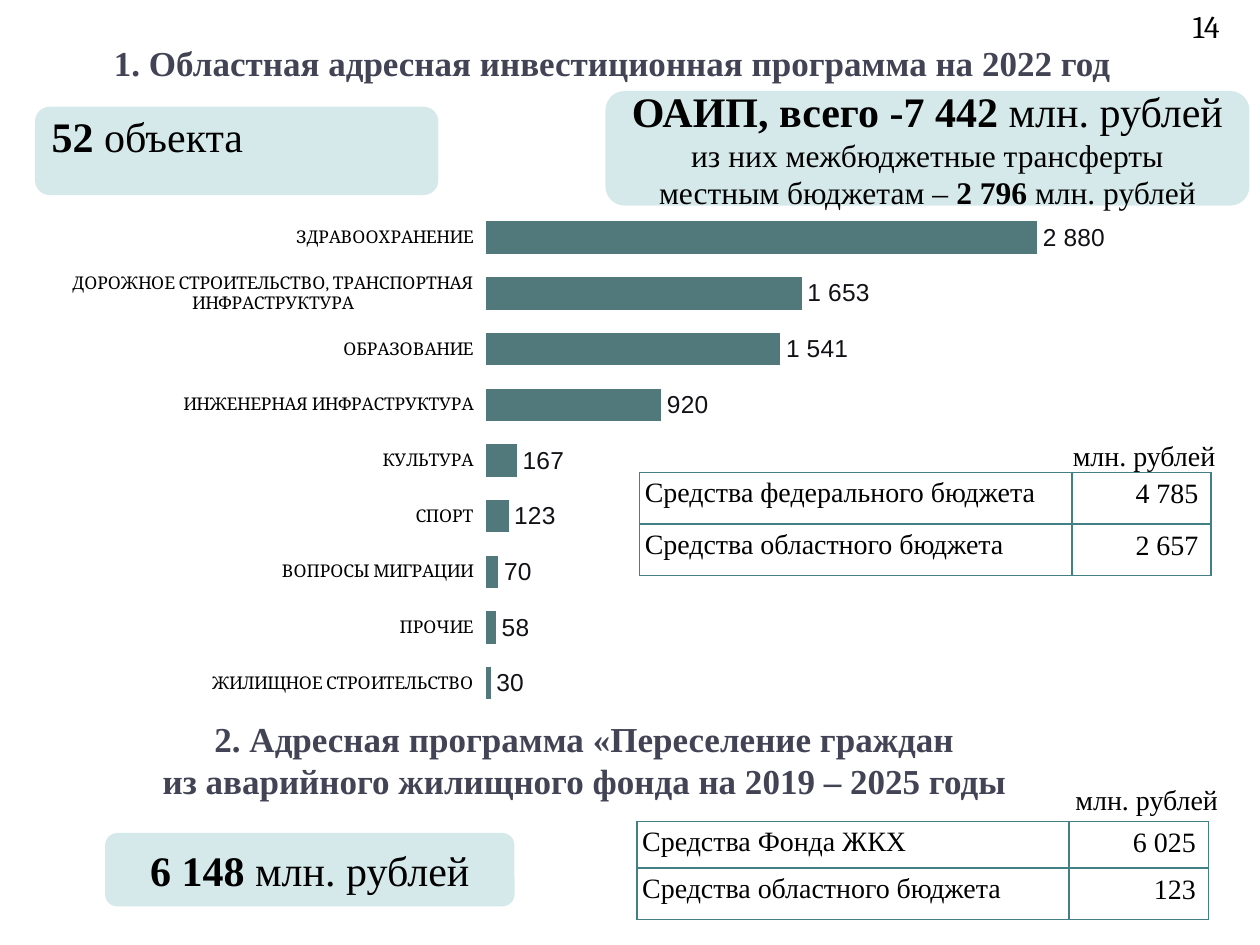
from dataclasses import dataclass

from lxml.etree import SubElement
from pptx import Presentation
from pptx.chart.data import CategoryChartData
from pptx.dml.color import RGBColor
from pptx.enum.chart import (XL_CHART_TYPE, XL_LABEL_POSITION, XL_TICK_LABEL_POSITION,
                             XL_TICK_MARK)
from pptx.enum.shapes import MSO_SHAPE
from pptx.enum.text import MSO_ANCHOR, PP_ALIGN
from pptx.oxml import parse_xml
from pptx.oxml.ns import nsdecls, qn
from pptx.util import Pt

BLACK = RGBColor(0x00, 0x00, 0x00)
WHITE = RGBColor(0xFF, 0xFF, 0xFF)
INK = RGBColor(0x11, 0x11, 0x16)
HEAD = RGBColor(0x42, 0x44, 0x56)
PALE = RGBColor(0xD6, 0xE9, 0xEA)
TEAL = RGBColor(0x43, 0x80, 0x86)
BAR = RGBColor(0x51, 0x78, 0x7B)
SERIF = "Times New Roman"
UNIT = "млн. рублей"


@dataclass
class Run:
    text: str
    size: int = 24
    bold: bool = False
    color: RGBColor = BLACK
    font: str = SERIF


@dataclass
class Box:
    place: tuple
    paras: list
    frame: dict
    align: PP_ALIGN = PP_ALIGN.CENTER


@dataclass
class Grid:
    left: float
    top: float
    highs: tuple
    rows: list
    unit: tuple


MIDDLE = {"vertical_anchor": MSO_ANCHOR.MIDDLE, "word_wrap": True}
TOP = {"vertical_anchor": MSO_ANCHOR.TOP, "word_wrap": True, "margin_top": 0}
BOTTOM = {"vertical_anchor": MSO_ANCHOR.BOTTOM, "word_wrap": True}
LOOSE = {"vertical_anchor": MSO_ANCHOR.TOP, "word_wrap": False}


def points(place: tuple) -> list:
    return [Pt(num) for num in place]


def style(item, form: dict) -> None:
    for key, val in form.items():
        setattr(item, key, val)


def write(frame, paras: list, align: PP_ALIGN) -> None:
    for num, runs in enumerate(paras):
        para = frame.add_paragraph() if num else frame.paragraphs[0]
        para.alignment = align
        for run in runs:
            # A line break splits a run in two
            for count, text in enumerate(run.text.split("\n")):
                if count:
                    para.add_line_break()
                part = para.add_run()
                part.text = text
                style(part.font, {"size": Pt(run.size), "bold": run.bold, "name": run.font})
                part.font.color.rgb = run.color


def fill_text(shape, box: Box) -> None:
    style(shape.text_frame, box.frame)
    write(shape.text_frame, box.paras, box.align)


def draw_text(slide, box: Box) -> None:
    fill_text(slide.shapes.add_textbox(*points(box.place)), box)


def draw_card(slide, box: Box) -> None:
    card = slide.shapes.add_shape(MSO_SHAPE.ROUNDED_RECTANGLE, *points(box.place))
    card.shadow.inherit = False
    card.fill.solid()
    card.fill.fore_color.rgb = PALE
    card.line.fill.background()
    fill_text(card, box)


def edge(cell) -> None:
    """Draw a thin line on all four sides of a cell."""
    props = cell._tc.get_or_add_tcPr()
    for num, side in enumerate(("lnL", "lnR", "lnT", "lnB")):
        props.insert(num, parse_xml(
            f'<a:{side} {nsdecls("a")} w="{Pt(1)}"><a:solidFill>'
            f'<a:srgbClr val="{TEAL}"/></a:solidFill></a:{side}>'))


def draw_grid(slide, grid: Grid) -> None:
    wide = (247, 79.5)
    place = points((grid.left, grid.top, sum(wide), sum(grid.highs)))
    table = slide.shapes.add_table(len(grid.rows), len(wide), *place).table
    style(table, {"first_row": False, "horz_banding": False})
    for col, size in zip(table.columns, wide):
        col.width = Pt(size)
    slim = dict.fromkeys(("margin_left", "margin_right", "margin_top", "margin_bottom"), Pt(3))
    forms = ((slim, PP_ALIGN.LEFT), ({}, PP_ALIGN.RIGHT))
    for row, high, texts in zip(table.rows, grid.highs, grid.rows):
        row.height = Pt(high)
        for cell, text, (form, align) in zip(row.cells, texts, forms):
            style(cell, form)
            cell.fill.background()
            write(cell.text_frame, [[Run(text, 16)]], align)
            edge(cell)
    draw_text(slide, Box(grid.unit, [[Run(UNIT, 16)]], LOOSE, PP_ALIGN.LEFT))


def lay_plot(chart, **sizes: float) -> None:
    """Fix the inner plot area as shares of the chart."""
    area = chart._chartSpace.chart.plotArea
    for old in area.findall(qn("c:layout")):
        area.remove(old)
    layout = parse_xml(f'<c:layout {nsdecls("c")}/>')
    area.insert(0, layout)
    manual = SubElement(layout, qn("c:manualLayout"))
    marks = {"layoutTarget": "inner", "xMode": "edge", "yMode": "edge", **sizes}
    for key, val in marks.items():
        SubElement(manual, qn(f"c:{key}")).set("val", str(val))


def draw_chart(slide, place: tuple, items: dict) -> None:
    data = CategoryChartData()
    data.categories = list(items)
    data.add_series("Series 1", list(items.values()))
    chart = slide.shapes.add_chart(XL_CHART_TYPE.BAR_CLUSTERED, *points(place), data).chart
    style(chart, {"has_legend": False, "has_title": False})
    style(chart.font, {"size": Pt(10), "name": "Cambria"})
    chart.font.color.rgb = BLACK
    style(chart.value_axis, {"visible": False, "has_major_gridlines": False,
                             "minimum_scale": 0, "maximum_scale": 3500})
    style(chart.category_axis, {"major_tick_mark": XL_TICK_MARK.NONE,
                                "tick_label_position": XL_TICK_LABEL_POSITION.LOW})
    chart.category_axis.format.line.fill.background()
    plot = chart.plots[0]
    style(plot, {"gap_width": 65, "vary_by_categories": False, "has_data_labels": True})
    look = plot.series[0].format
    look.fill.solid()
    look.fill.fore_color.rgb = BAR
    look.line.color.rgb = WHITE
    look.line.width = Pt(0.75)
    labels = plot.data_labels
    style(labels, {"show_value": True, "position": XL_LABEL_POSITION.OUTSIDE_END,
                   "number_format": r"[>=1000]0\ 000;0", "number_format_is_linked": False})
    style(labels.font, {"size": Pt(14), "name": "Arial"})
    labels.font.color.rgb = INK
    lay_plot(chart, x=0.39, y=0.18, w=0.59, h=0.77)


ITEMS = {
    "ЖИЛИЩНОЕ СТРОИТЕЛЬСТВО": 30,
    "ПРОЧИЕ": 58,
    "ВОПРОСЫ МИГРАЦИИ": 70,
    "СПОРТ": 123,
    "КУЛЬТУРА": 167,
    "ИНЖЕНЕРНАЯ ИНФРАСТРУКТУРА": 920,
    "ОБРАЗОВАНИЕ": 1541,
    "ДОРОЖНОЕ СТРОИТЕЛЬСТВО, ТРАНСПОРТНАЯ ИНФРАСТРУКТУРА": 1653,
    "ЗДРАВООХРАНЕНИЕ": 2880,
}
TITLE = Box((26, 21.5, 648, 28), [
    [Run("1. Областная адресная инвестиционная программа на 2022 год", 20, True, HEAD)]], MIDDLE)
TEXTS = [
    Box((644, 0, 60, 29), [[Run("14", 18, font="Cambria")]], BOTTOM, PP_ALIGN.RIGHT),
    Box((7, 414, 654, 40), [
        [Run("2. Адресная программа «Переселение граждан", 20, True, HEAD)],
        [Run("из аварийного жилищного фонда на 2019 – 2025 годы", 20, True, HEAD)]], MIDDLE),
]
CARDS = [
    Box((20, 61, 230.5, 50.5), [[Run("52 ", bold=True), Run("объекта")]], TOP, PP_ALIGN.LEFT),
    Box((346, 52, 368, 65.5), [
        [Run("ОАИП, всего -7 442 ", bold=True), Run(UNIT)],
        [Run("из них межбюджетные трансферты\nместным бюджетам – ", 18),
         Run("2 796 ", 18, True), Run(UNIT, 18)]], MIDDLE),
    Box((60, 476, 234, 42), [[Run("6 148 ", bold=True), Run(UNIT)]], MIDDLE),
]
GRIDS = [
    Grid(365.5, 270, (29.5, 29.5), [("Средства федерального бюджета", "4 785"),
                                    ("Средства областного бюджета", "2 657")],
         (606, 247, 97, 27)),
    Grid(364, 469.5, (26, 29.5), [("Средства Фонда ЖКХ", "6 025"),
                                  ("Средства областного бюджета", "123")],
         (607.5, 443.5, 97, 27)),
]


def main() -> None:
    deck = Presentation()
    style(deck, {"slide_width": Pt(720), "slide_height": Pt(540)})
    slide = deck.slides.add_slide(deck.slide_layouts[5])
    title = slide.shapes.title
    style(title, dict(zip(("left", "top", "width", "height"), points(TITLE.place))))
    fill_text(title, TITLE)
    draw_chart(slide, (24, 53, 650, 372), ITEMS)
    for draw, parts in ((draw_card, CARDS), (draw_text, TEXTS), (draw_grid, GRIDS)):
        for part in parts:
            draw(slide, part)
    deck.save("out.pptx")


if __name__ == "__main__":
    main()
